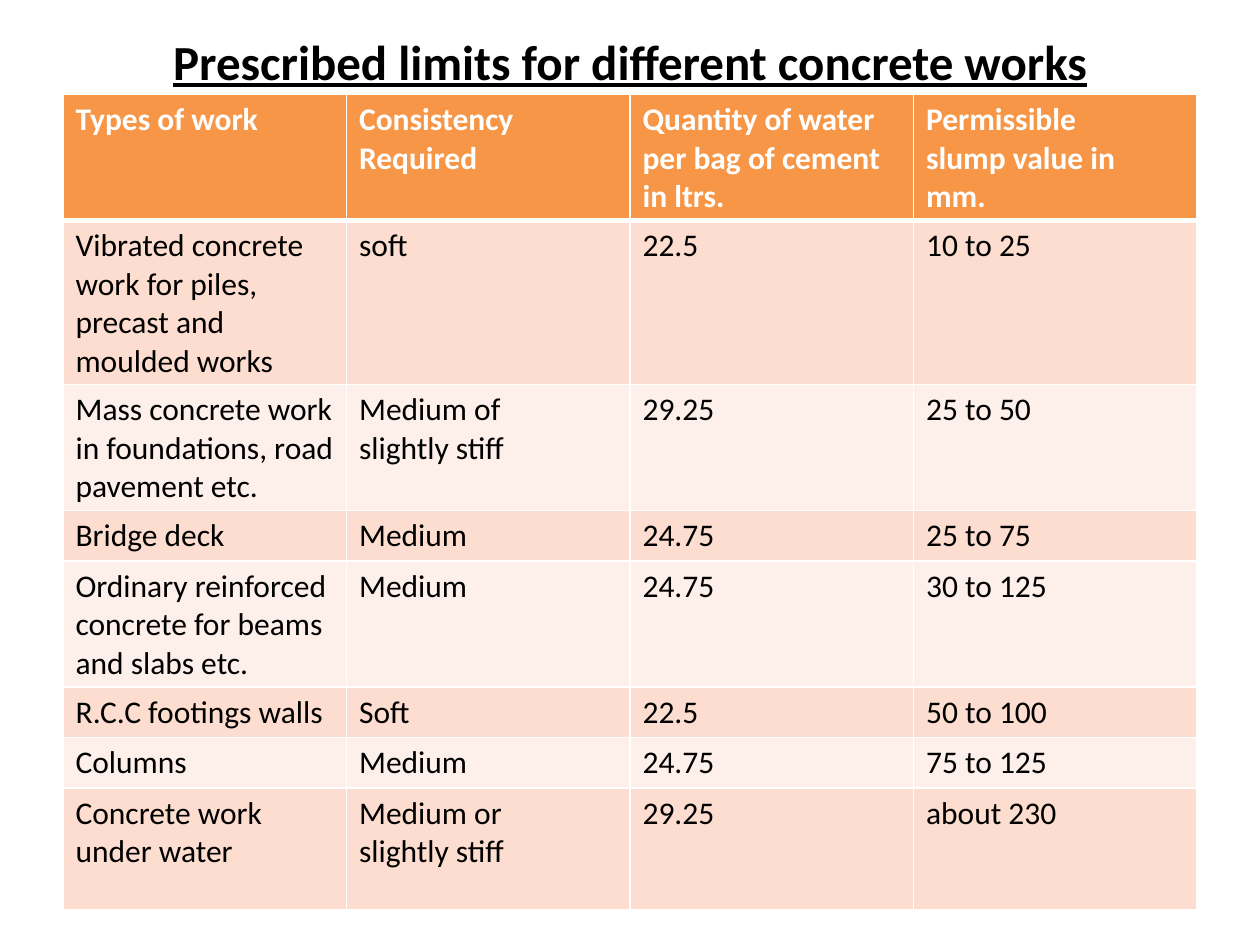
import pptx
import pptx.util
import pptx.dml.color
import pptx.enum.text
import pptx.oxml
import pptx.oxml.ns
from pptx.util import Inches

FONT = "Calibri"
WHITE, BLACK, ORANGE = "FFFFFF", "000000", "F79646"
BANDS = ["FCDDCF", "FDEFE9"]
HEIGHTS = [0.97, 1.27, 0.97, 0.39, 0.97, 0.39, 0.39, 0.97]
ROWS = [
    ["Types of work", "Consistency\nRequired",
     "Quantity of water\nper bag of cement\nin ltrs.",
     "Permissible\nslump value in\nmm."],
    ["Vibrated concrete work for piles, precast and moulded works",
     "soft", "22.5", "10 to 25"],
    ["Mass concrete work in foundations, road pavement etc.",
     "Medium of\nslightly stiff", "29.25", "25 to 50"],
    ["Bridge deck", "Medium", "24.75", "25 to 75"],
    ["Ordinary reinforced concrete for beams and slabs etc.",
     "Medium", "24.75", "30 to 125"],
    ["R.C.C footings walls", "Soft", "22.5", "50 to 100"],
    ["Columns", "Medium", "24.75", "75 to 125"],
    ["Concrete work under water", "Medium or\nslightly stiff",
     "29.25", "about 230"],
]


def rgb(code):
    return pptx.dml.color.RGBColor.from_string(code)


def write(frame, text, size, color, bold=False, line=False):
    """Fill a text frame, one paragraph for each line of text."""
    for i, part in enumerate(text.split("\n")):
        para = frame.add_paragraph() if i else frame.paragraphs[0]
        run = para.add_run()
        run.text = part
        font = run.font
        font.name, font.size = FONT, pptx.util.Pt(size)
        font.bold, font.underline = bold, line
        font.color.rgb = rgb(color)


def add_title(slide, text):
    box = slide.shapes.add_textbox(Inches(0.5), Inches(0.17),
                                   Inches(9), Inches(0.62))
    frame = box.text_frame
    frame.word_wrap = True
    frame.vertical_anchor = pptx.enum.text.MSO_ANCHOR.MIDDLE
    write(frame, text, 28, BLACK, bold=True, line=True)
    frame.paragraphs[0].alignment = pptx.enum.text.PP_ALIGN.CENTER


def set_edges(cell, widths):
    """Draw white borders; widths maps L, R, T, B to points."""
    props = cell._tc.get_or_add_tcPr()
    for i, (side, width) in enumerate(widths.items()):
        edge = pptx.oxml.parse_xml(
            f'<a:ln{side} {pptx.oxml.ns.nsdecls("a")} '
            f'w="{pptx.util.Pt(width)}"><a:solidFill>'
            f'<a:srgbClr val="{WHITE}"/></a:solidFill></a:ln{side}>')
        props.insert(i, edge)


def add_grid(slide):
    table = slide.shapes.add_table(
        len(ROWS), len(ROWS[0]), Inches(0.5), Inches(0.75),
        Inches(9), Inches(sum(HEIGHTS))).table
    for r, texts in enumerate(ROWS):
        table.rows[r].height = Inches(HEIGHTS[r])
        head = r == 0
        fill = ORANGE if head else BANDS[(r - 1) % 2]
        edges = {"L": 1, "R": 1, "T": 3 if r == 1 else 1,
                 "B": 3 if head else 1}
        for c, text in enumerate(texts):
            cell = table.cell(r, c)
            cell.fill.solid()
            cell.fill.fore_color.rgb = rgb(fill)
            set_edges(cell, edges)
            write(cell.text_frame, text, 18,
                  WHITE if head else BLACK, bold=head)


def main():
    deck = pptx.Presentation()
    deck.slide_width, deck.slide_height = Inches(10), Inches(7.5)
    slide = deck.slides.add_slide(deck.slide_layouts[6])
    add_title(slide, "Prescribed limits for different concrete works")
    add_grid(slide)
    deck.save("out.pptx")


if __name__ == "__main__":
    main()
